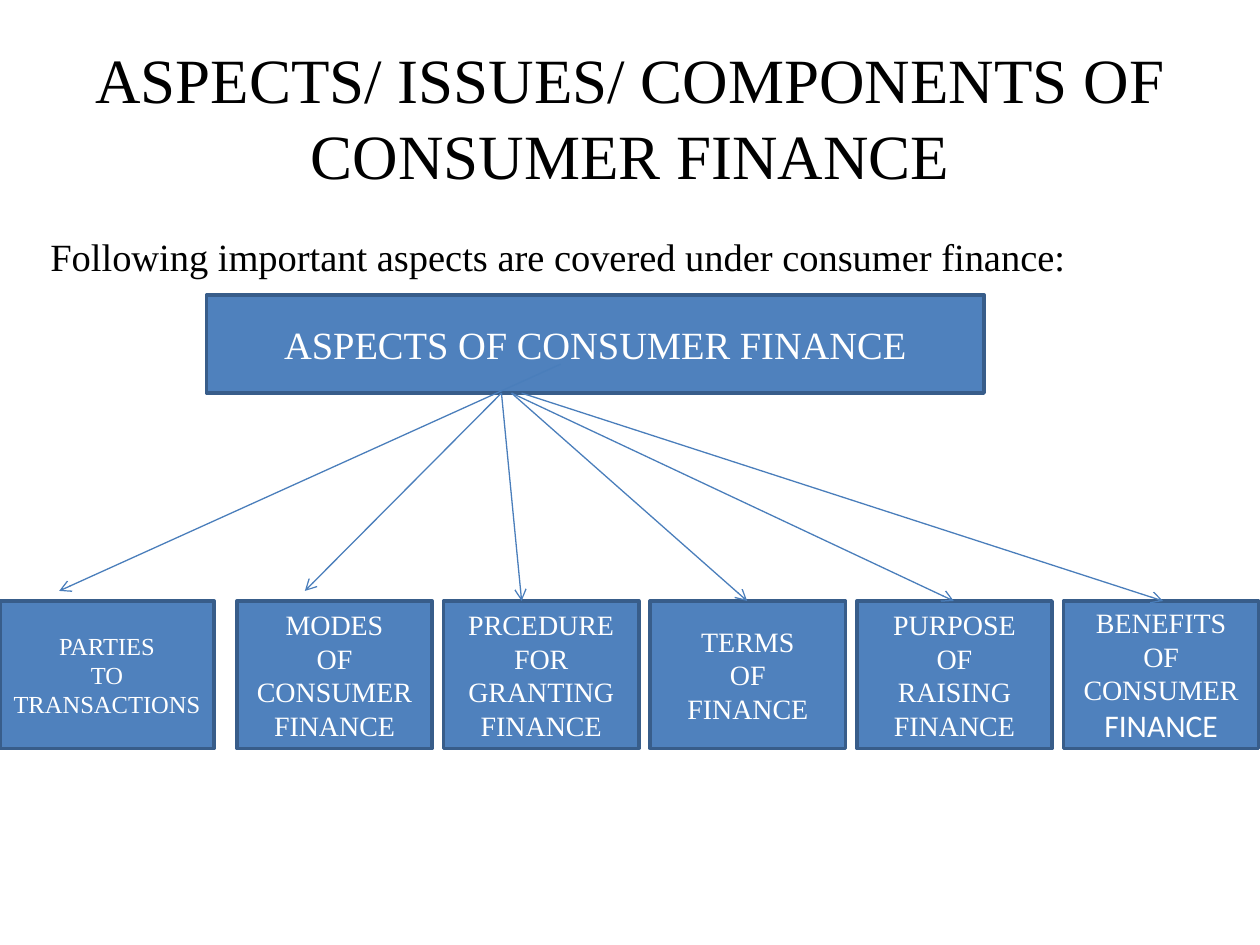
"""Build a slide that maps the aspects of consumer finance."""
from lxml.etree import SubElement
from pptx import Presentation
from pptx.dml.color import RGBColor
from pptx.enum.shapes import MSO_CONNECTOR, MSO_SHAPE
from pptx.enum.text import MSO_ANCHOR, PP_ALIGN
from pptx.oxml.ns import qn
from pptx.util import Inches, Pt

BLACK = RGBColor(0x00, 0x00, 0x00)
WHITE = RGBColor(0xFF, 0xFF, 0xFF)
BOX_FILL = RGBColor(0x4F, 0x81, 0xBD)
BOX_LINE = RGBColor(0x38, 0x5D, 0x8A)
ARROW_LINE = RGBColor(0x4A, 0x7E, 0xBB)
SERIF = "Times New Roman"
BOX_TOP = 4.77
ROOT_BOTTOM = 3.12


def write_text(shape, text, size, color, alignment):
    frame = shape.text_frame
    frame.word_wrap = True
    frame.text = text
    for paragraph in frame.paragraphs:
        paragraph.alignment = alignment
        for span in paragraph.runs:
            span.font.name = SERIF
            span.font.size = Pt(size)
            span.font.color.rgb = color


def add_box(page, left, top, width, height, text, size):
    box = page.shapes.add_shape(
        MSO_SHAPE.RECTANGLE, Inches(left), Inches(top), Inches(width), Inches(height)
    )
    box.shadow.inherit = False
    box.fill.solid()
    box.fill.fore_color.rgb = BOX_FILL
    box.line.color.rgb = BOX_LINE
    box.line.width = Pt(2)
    box.text_frame.vertical_anchor = MSO_ANCHOR.MIDDLE
    write_text(box, text, size, WHITE, PP_ALIGN.CENTER)
    return box


deck = Presentation()
deck.slide_width = Inches(10)
deck.slide_height = Inches(7.5)
page = deck.slides.add_slide(deck.slide_layouts[5])

title = page.shapes.title
title.left, title.top = Inches(0.5), Inches(0.3)
title.width, title.height = Inches(9), Inches(1.25)
title.text_frame.vertical_anchor = MSO_ANCHOR.MIDDLE
write_text(
    title, "ASPECTS/ ISSUES/ COMPONENTS OF CONSUMER FINANCE", 36, BLACK, PP_ALIGN.CENTER
)

intro = page.shapes.add_textbox(Inches(0), Inches(1.8), Inches(10), Inches(4.9))
write_text(
    intro,
    "Following important aspects are covered under consumer finance:",
    22,
    BLACK,
    PP_ALIGN.JUSTIFY,
)
intro.text_frame.margin_left = Inches(0.4)
intro.text_frame.paragraphs[0].space_before = Pt(4.4)

add_box(page, 1.64, 2.34, 6.17, 0.78, "ASPECTS OF CONSUMER FINANCE", 22)

add_box(page, 0, BOX_TOP, 1.7, 1.17, "PARTIES\nTO\nTRANSACTIONS", 14)
aspects = [
    "MODES\nOF CONSUMER\nFINANCE",
    "PRCEDURE\nFOR\nGRANTING FINANCE",
    "TERMS\nOF\nFINANCE",
    "PURPOSE\nOF\nRAISING\nFINANCE",
    "BENEFITS\nOF\nCONSUMER\nFINANCE",
]
for index, aspect in enumerate(aspects):
    box = add_box(page, 1.88 + 1.64 * index, BOX_TOP, 1.55, 1.17, aspect, 16)

last_font = box.text_frame.paragraphs[-1].runs[0].font
last_font.name = "Calibri"
last_font.size = Pt(18)

arrows = [
    (4.45, 2.89, 0.47, 4.69),
    (3.98, ROOT_BOTTOM, 2.42, 4.69),
    (3.98, ROOT_BOTTOM, 4.14, BOX_TOP),
    (4.06, ROOT_BOTTOM, 5.93, BOX_TOP),
    (4.06, ROOT_BOTTOM, 7.57, BOX_TOP),
    (4.14, ROOT_BOTTOM, 9.23, BOX_TOP),
]
for points in arrows:
    arrow = page.shapes.add_connector(
        MSO_CONNECTOR.STRAIGHT, *[Inches(point) for point in points]
    )
    arrow.line.color.rgb = ARROW_LINE
    arrow.line.width = Pt(0.75)
    SubElement(arrow.line._get_or_add_ln(), qn("a:tailEnd"), type="arrow")
    SubElement(arrow._element.spPr, qn("a:effectLst"))

deck.save("out.pptx")
